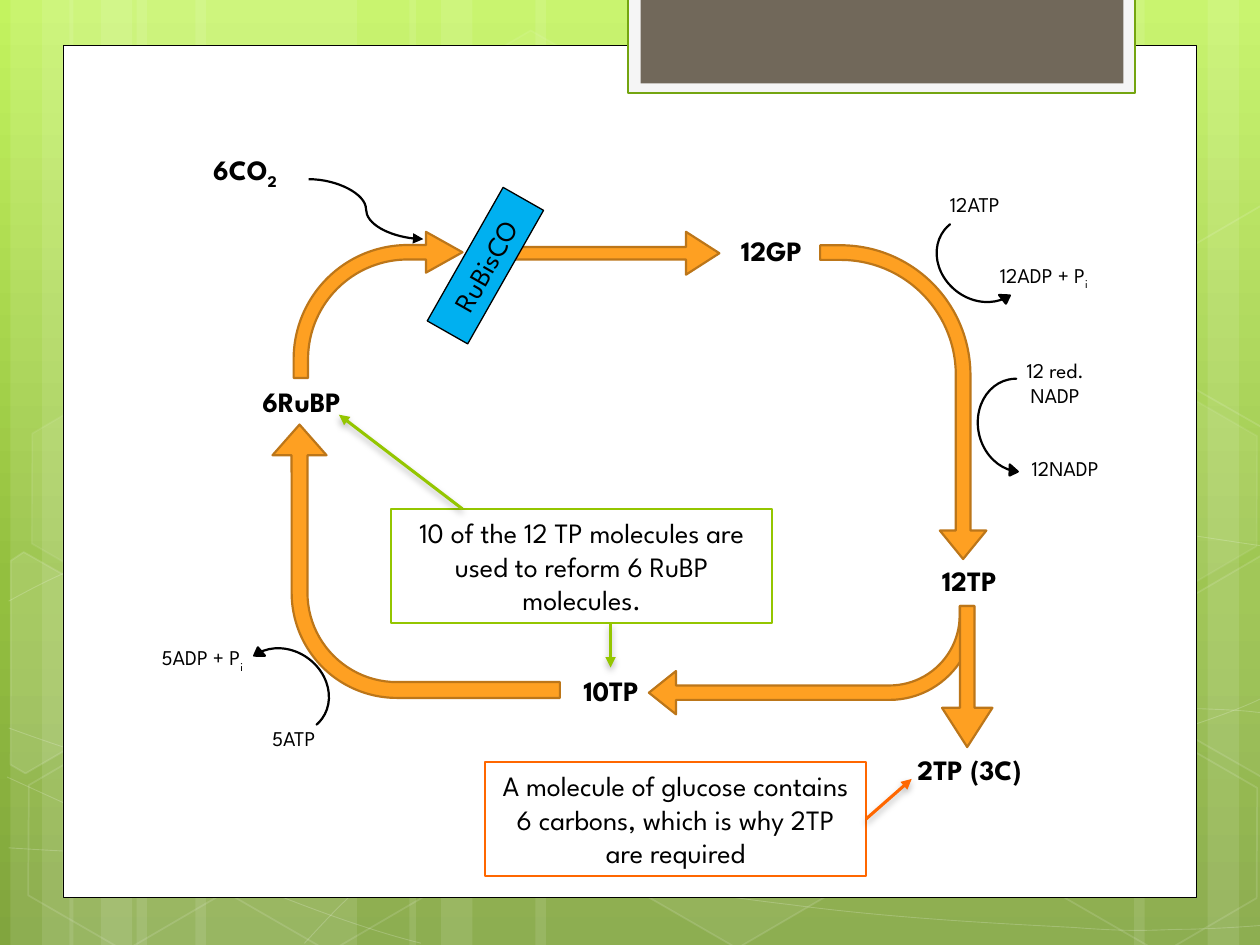
from copy import deepcopy
from math import cos, radians, sin

from lxml.etree import SubElement as Sub
from pptx import Presentation
from pptx.dml.color import RGBColor as Rgb
from pptx.enum.shapes import MSO_CONNECTOR as Link, MSO_SHAPE as Form
from pptx.enum.text import MSO_ANCHOR as Anchor, MSO_AUTO_SIZE as Size, PP_ALIGN as Align
from pptx.oxml.ns import qn
from pptx.util import Pt

HUES = {
    "top": "C3F35F", "mid": "93BF3F", "base": "81A53E", "white": "FFFFFF",
    "black": "000000", "pale": "F5F5F5", "edge": "74A510", "brown": "71685A",
    "gold": "FEA022", "rust": "BC7619", "blue": "00B0F0", "fire": "FF6700",
    "lime": "94C600",
}
FACE = "League Spartan"
HEAD = {"name": FACE, "size": Pt(16), "bold": True}
BODY = {"name": FACE, "size": Pt(16), "bold": False}
TINY = {"name": FACE, "size": Pt(12), "bold": False}


def hue(name):
    return Rgb.from_string(HUES[name])


def tint(fill, name, part=100):
    if not name or not part:
        fill.background()
        return
    fill.solid()
    fill.fore_color.rgb = hue(name)
    if part < 100:
        node = fill._xPr.find(".//" + qn("a:srgbClr"))
        Sub(node, qn("a:alpha"), val=str(part * 1000))


def dress(item, fill=None, part=100, line=None, wide=1.25, clear=100):
    item.shadow.inherit = False
    tint(item.fill, fill, part)
    tint(item.line.fill, line, clear)
    if line:
        item.line.width = Pt(wide)
    return item


def shape(slide, form, box, turn=0, adj=(), **look):
    item = slide.shapes.add_shape(form, *map(Pt, box))
    item.rotation = turn
    for i, val in enumerate(adj):
        item.adjustments[i] = val
    return dress(item, **look)


def trace(slide, pts, close, **look):
    dots = [(Pt(x), Pt(y)) for x, y in pts]
    pen = slide.shapes.build_freeform(*dots[0], scale=1.0)
    pen.add_line_segments(dots[1:], close=close)
    return dress(pen.convert_to_shape(), **look)


def curve(slide, pts, **look):
    item = trace(slide, pts, False, **look)
    legs = list(item._element.iter(qn("a:lnTo")))
    root = legs[0].getparent()
    for i in range(0, len(legs), 3):
        cube = Sub(root, qn("a:cubicBezTo"))
        for leg in legs[i:i + 3]:
            cube.append(leg[0])
            root.remove(leg)


def spin(pts, mid, turn):
    c, s = cos(radians(turn)), sin(radians(turn))
    gaps = [(x - mid[0], y - mid[1]) for x, y in pts]
    return [(mid[0] + x * c - y * s, mid[1] + x * s + y * c) for x, y in gaps]


def write(item, text, fmt, anchor=Anchor.TOP):
    frame = item.text_frame
    frame.word_wrap = True
    frame.auto_size = Size.SHAPE_TO_FIT_TEXT
    frame.vertical_anchor = anchor
    for i, row in enumerate(text.split("\n")):
        para = frame.add_paragraph() if i else frame.paragraphs[0]
        para.alignment = Align.CENTER
        for low, part in enumerate(row.split("_")):
            run = para.add_run()
            run.text = part
            for key, val in fmt.items():
                setattr(run.font, key, val)
            run.font.color.rgb = hue("black")
            if low:
                run.font._element.set("baseline", "-25000")


def label(slide, x, y, text, fmt, high=26.6):
    write(slide.shapes.add_textbox(Pt(x), Pt(y), Pt(91.4), Pt(high)), text, fmt)


def arrow(slide, kind, ends, name, wide, shade=False):
    item = slide.shapes.add_connector(kind, *map(Pt, ends))
    item.line.color.rgb = hue(name)
    item.line.width = Pt(wide)
    Sub(item.line._get_or_add_ln(), qn("a:tailEnd"), type="triangle")
    glow = Sub(item._element.spPr, qn("a:effectLst"))
    if shade:
        cast = Sub(glow, qn("a:outerShdw"), blurRad=str(Pt(4)), dist=str(Pt(2)),
                   dir="5400000", rotWithShape="0")
        ink = Sub(cast, qn("a:srgbClr"), val=HUES["black"])
        Sub(ink, qn("a:alpha"), val="28000")


def wash(slide):
    fill = slide.background.fill
    fill.gradient()
    fill.gradient_angle = 270
    stops = slide._element.find(".//" + qn("a:gsLst"))
    stops.append(deepcopy(stops[-1]))
    for stop, (pos, name) in zip(fill.gradient_stops, ((0, "top"), (0.62, "mid"), (1, "base"))):
        stop.position = pos
        stop.color.rgb = hue(name)


def scene(slide, box):
    left, top, wide, high = box

    def move(pts, drop=0):
        return [(left + x, top + y + drop) for x, y in pts]

    for x, w, turn in ((78, 126, 0), (6, 36, 0), (24, 60, 0), (111.6, 126, 0), (39.6, 36, 0),
                       (57.6, 60, 0), (528, 126, 180), (690, 36, 180), (648, 60, 180),
                       (306, 222, 0), (234, 36, 0), (252, 60, 0)):
        shape(slide, Form.RECTANGLE, (left + x, top, w, high), turn, fill="white", part=10)
    waves = (
        [(5, 484.5), (44, 487), (83, 489), (137, 488), (191, 487.5), (258, 486), (330, 479),
         (402, 472), (504, 458), (570, 444), (636, 430.5), (703.5, 409), (725, 397)],
        [(5, 343.5), (26, 332), (47, 321), (87, 310), (128, 299.5), (186.5, 283.5), (250, 278.5),
         (314, 273.5), (392, 273), (471, 278.5), (550, 284.5), (682, 306.5), (725, 312.5)],
        [(4, 444), (91.5, 484), (178, 523.5), (240.5, 539)],
        [(5, 416), (27, 424), (50, 432), (92, 443.5), (134, 454), (196.5, 472), (257, 484.5),
         (317, 497), (392, 510), (452, 517), (512, 525), (576, 528), (614, 530),
         (652, 533), (662, 531), (680, 531), (699, 530.5), (712, 529.5), (725, 528.5)],
        [(174, 539), (187, 525), (200, 510.5), (217.5, 497.5), (235, 484.5), (259, 470), (279, 460),
         (299.5, 450), (312, 446), (338, 438.5), (364, 431), (412.5, 421), (438, 416),
         (464, 411), (467, 411), (490, 410), (512, 407.5), (547, 405), (572, 405),
         (597, 404), (638, 405), (638, 405), (638, 405), (686, 405), (686, 405),
         (699, 405.5), (711, 406), (718, 407), (724.5, 407.5), (722, 407), (724, 407.5)],
    )
    for wave in waves:
        curve(slide, move(wave), line="white", wide=0.5, clear=20)
    for x, y, part, clear in ((240.5, 26, 4, 8), (358, 424, 6, 12), (8, 425.5, 0, 12),
                              (10, 224.5, 7, 8), (125, 426, 0, 12), (542, 326, 10, 12),
                              (600.5, 427, 0, 12), (600.5, 226, 7, 8)):
        shape(slide, Form.HEXAGON, (left + x, top + y, 126, 109.4), 30, (0.285,),
              fill="white", part=part, line="white", wide=1, clear=clear)
    west = [(6, 320.5), (13.5, 315.5), (69, 347), (68.5, 410.5), (14.5, 442), (6, 437)]
    east = [(666.5, 349), (720.5, 317.5), (726.5, 321), (726.5, 441.5), (721.5, 444), (666.5, 412.5)]
    for pts, mid, drop, part in ((west, (25.9, 385.2), 0, 10), (east, (709.2, 374.4), 0, 4),
                                 (east, (709.2, 374.4), -200, 0)):
        item = trace(slide, move(spin(pts, mid, -30), drop), True, fill="white", part=part,
                     line="white", wide=1, clear=12)
        item.rotation = 30


def panel(slide, box):
    x, y = box[:2]
    shape(slide, Form.RECTANGLE, box, fill="white", line="black", wide=0.5)
    shape(slide, Form.RECTANGLE, (x + 323, y - 27.4, 289.6, 54.8), fill="pale", line="edge")
    shape(slide, Form.RECTANGLE, (x + 330.1, y - 27.4, 275.9, 49), fill="brown")


def cycle(slide, box):
    left, top = box[:2]
    bent, right = Form.BENT_ARROW, Form.RIGHT_ARROW
    flat = (0.291, 0.778)
    for form, x, y, w, h, turn, adj in (
            (right, 204.5, 52.5, 116.6, 24.5, 0, flat),
            (bent, 77.8, 52.5, 96.5, 83.5, 0, (0.099, 0.14, 0.25, 0.781)),
            (bent, 336.5, 102.3, 179.3, 95, 90, (0.088, 0.14, 0.171, 0.781)),
            (bent, 280.8, 266.3, 185.8, 61.9, 180, (0.133, 0.2, 0.25, 0.781)),
            (right, 422.4, 292.2, 80.6, 28.8, 90, flat),
            (bent, 69.7, 158.6, 156.2, 164.2, 270, (0.058, 0.099, 0.112, 0.385))):
        shape(slide, form, (left + x, top + y, w, h), turn, adj, fill="gold", line="rust")
    bar = shape(slide, Form.RECTANGLE, (left + 143.5, top + 58.5, 87.8, 26.6), 299.6,
                fill="blue", line="black", wide=0.75)
    write(bar, "RuBisCO", BODY, Anchor.MIDDLE)
    arrow(slide, Link.CURVE, (left + 86.4, top + 22.4, left + 151.9, top + 56.6), "black", 1.25)
    for x, y, text in ((36.7, 136, "6RuBP"), (4.3, 3.5, "6CO_2"), (305.3, 50, "12GP"),
                       (418.3, 238.5, "12TP"), (418.3, 346.5, "2TP (3C)"), (213.6, 301.6, "10TP")):
        label(slide, left + x, top + y, text, HEAD)


def swap(slide, box, turn, tags):
    arc = shape(slide, Form.CIRCULAR_ARROW, box, turn, (0, 6.177, 201.788, 102.235, 0.06),
                fill="black", line="black")
    arc._element.spPr.xfrm.set("flipH", "1")
    for x, y, text in tags:
        label(slide, box[0] + x, box[1] + y, text, TINY, 36 if "\n" in text else 21.6)


def note(slide, box, text, name, ends):
    x, y = box[:2]
    card = shape(slide, Form.RECTANGLE, box, fill="white", line=name)
    write(card, text, BODY, Anchor.MIDDLE)
    for a, b, c, d in ends:
        arrow(slide, Link.STRAIGHT, (x + a, y + b, x + c, y + d), name, 1.75, True)


def main():
    deck = Presentation()
    deck.slide_width, deck.slide_height = Pt(720), Pt(540)
    slide = deck.slides.add_slide(deck.slide_layouts[6])
    wash(slide)
    scene(slide, (0, 0, 720, 540))
    panel(slide, (36, 26, 648, 487))
    cycle(slide, (90, 80, 510, 373))
    for x, y, turn, tags in (
            (530.8, 121.7, 218.4, ((-19.4, -15.9, "12ATP"), (20, 24.5, "12ADP + P_i"))),
            (552.2, 216.7, 257.6, ((5.1, -15.8, "12 red.\nNADP"), (10.8, 40.3, "12NADP"))),
            (132.5, 368.6, 36.3, ((-10.3, 42.5, "5ATP"), (-62.5, -3.6, "5ADP + P_i")))):
        swap(slide, (x, y, 59.8, 52.6), turn, tags)
    note(slide, (277.2, 435.2, 217.7, 65.4),
         "A molecule of glucose contains 6 carbons, which is why 2TP are required",
         "fire", [(217.7, 32.8, 243.8, 9.9)])
    note(slide, (223.6, 290.8, 217.7, 65.4),
         "10 of the 12 TP molecules are used to reform 6 RuBP molecules.",
         "lime", [(125.3, 65.4, 125.3, 90.7), (40.6, 0, -29.9, -53.8)])
    deck.save("out.pptx")


if __name__ == "__main__":
    main()
